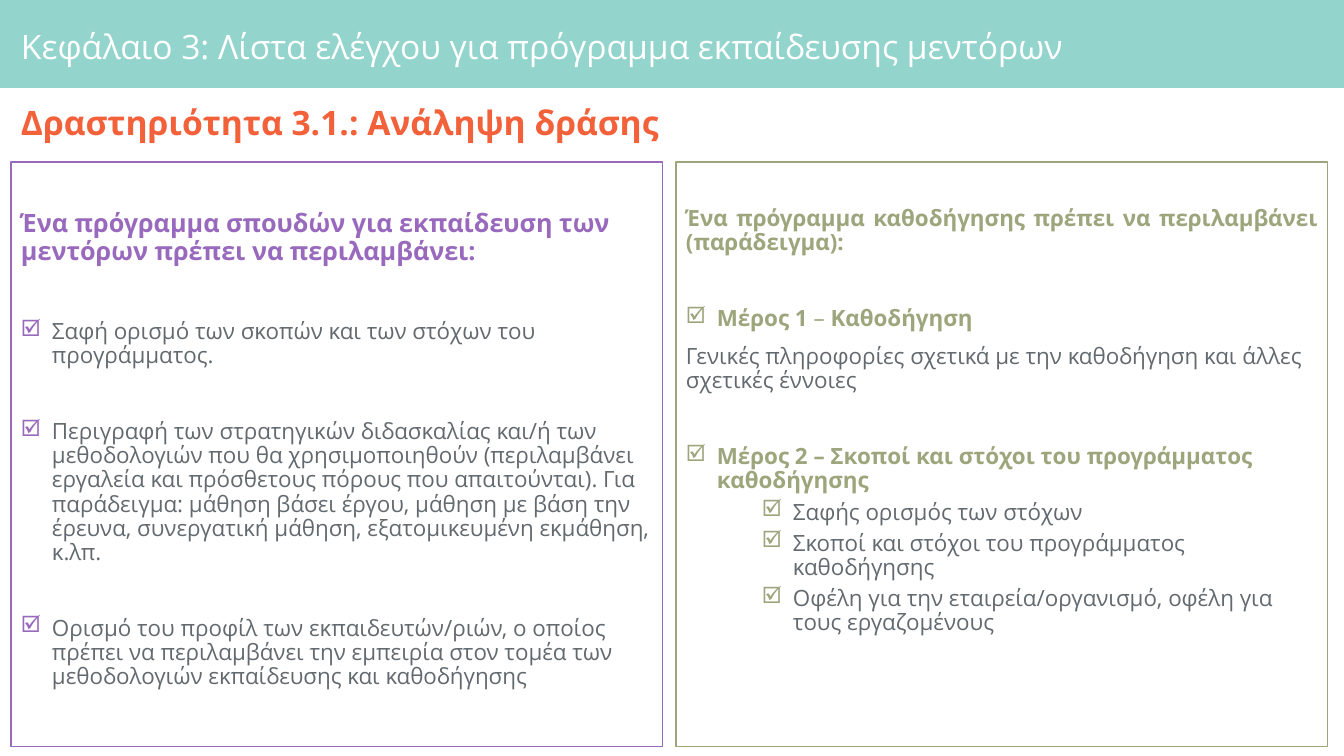
import pptx
import pptx.dml.color
import pptx.enum.shapes
import pptx.enum.text
import pptx.oxml.ns
import pptx.util
from lxml import etree

EMU_PER_PX = 914400 / 100.8
FONT = "Open Sans"
BULLET_FONT, CHECK_MARK = "Wingdings", "þ"
MINT, ORANGE, WHITE = "93D4CC", "F2613A", "FFFFFF"
PURPLE, OLIVE, GREY = "9869BD", "9DA57C", "636A6F"
LEFT = pptx.enum.text.PP_ALIGN.LEFT
JUSTIFY = pptx.enum.text.PP_ALIGN.JUSTIFY
MARGIN, GAP = 11, 13
PANEL_WIDTH, PANEL_TOP, PANEL_HEIGHT = 652, 162, 585


def px(length):
    return pptx.util.Emu(round(length * EMU_PER_PX))


def colour(value):
    return pptx.dml.color.RGBColor.from_string(value)


def add_rectangle(page, left, top, width, height, fill=None, line=None):
    box = page.shapes.add_shape(
        pptx.enum.shapes.MSO_SHAPE.RECTANGLE, px(left), px(top), px(width), px(height))
    box.shadow.inherit = False
    if fill:
        box.fill.solid()
        box.fill.fore_color.rgb = colour(fill)
    else:
        box.fill.background()
    if line:
        box.line.color.rgb = colour(line)
        box.line.width = pptx.util.Pt(0.75)
    else:
        box.line.fill.background()
    return box


def prepare_frame(box, anchor, top_inset):
    frame = box.text_frame
    frame.word_wrap = True
    frame.vertical_anchor = anchor
    frame.margin_left = frame.margin_right = px(10)
    frame.margin_top, frame.margin_bottom = px(top_inset), px(5)
    return frame


def style_paragraph(para, size, tone, bold=False, before=0, align=LEFT):
    para.font.name = FONT
    para.font.size = pptx.util.Pt(size)
    para.font.color.rgb = colour(tone)
    para.font.bold = bold
    para.alignment = align
    para.line_spacing = 0.9
    para.space_before = pptx.util.Pt(before)


def add_check(para, tone, indent):
    properties = para._p.get_or_add_pPr()
    properties.set("marL", str(px(indent)))
    properties.set("indent", str(px(-31)))
    qn = pptx.oxml.ns.qn
    bullet_colour = etree.SubElement(properties, qn("a:buClr"))
    etree.SubElement(bullet_colour, qn("a:srgbClr")).set("val", tone)
    bullet_font = etree.SubElement(properties, qn("a:buFont"))
    bullet_font.set("typeface", BULLET_FONT)
    bullet_font.set("charset", "2")
    etree.SubElement(properties, qn("a:buChar")).set("char", CHECK_MARK)
    defaults = properties.find(qn("a:defRPr"))
    if defaults is not None:
        properties.append(defaults)


def add_heading(page, text, top, height, tone, bold):
    box = page.shapes.add_textbox(px(MARGIN), px(top), px(1317), px(height))
    frame = prepare_frame(box, pptx.enum.text.MSO_ANCHOR.MIDDLE, 5)
    frame.text = text
    style_paragraph(frame.paragraphs[0], 24, tone, bold)


def add_panel(page, column, tone, top_inset, heading, heading_size, heading_align):
    left = MARGIN + column * (PANEL_WIDTH + GAP)
    box = add_rectangle(page, left, PANEL_TOP, PANEL_WIDTH, PANEL_HEIGHT, line=tone)
    frame = prepare_frame(box, pptx.enum.text.MSO_ANCHOR.TOP, top_inset)
    frame.text = heading
    style_paragraph(frame.paragraphs[0], heading_size, tone, True, align=heading_align)
    return frame


def add_item(frame, text, tone, before, bold=False, check=None, indent=31):
    para = frame.add_paragraph()
    para.text = text
    style_paragraph(para, 16, tone, bold, before)
    if check:
        add_check(para, check, indent)
    return para


def add_curriculum(page):
    frame = add_panel(
        page, 0, PURPLE, 49,
        "Ένα πρόγραμμα σπουδών για εκπαίδευση των μεντόρων πρέπει να περιλαμβάνει:",
        18, LEFT)
    items = (
        ("Σαφή ορισμό των σκοπών και των στόχων του προγράμματος.", 39),
        ("Περιγραφή των στρατηγικών διδασκαλίας και/ή των μεθοδολογιών που θα "
         "χρησιμοποιηθούν (περιλαμβάνει εργαλεία και πρόσθετους πόρους που "
         "απαιτούνται). Για παράδειγμα: μάθηση βάσει έργου, μάθηση με βάση την έρευνα, "
         "συνεργατική μάθηση, εξατομικευμένη εκμάθηση, κ.λπ.", 37),
        ("Ορισμό του προφίλ των εκπαιδευτών/ριών, ο οποίος πρέπει να περιλαμβάνει την "
         "εμπειρία στον τομέα των μεθοδολογιών εκπαίδευσης και καθοδήγησης", 37),
    )
    for text, before in items:
        add_item(frame, text, GREY, before, check=PURPLE)


def add_programme(page):
    frame = add_panel(
        page, 1, OLIVE, 45,
        "Ένα πρόγραμμα καθοδήγησης πρέπει να περιλαμβάνει (παράδειγμα):", 16, JUSTIFY)
    part = add_item(frame, "Μέρος 1 ", OLIVE, 37, True, OLIVE)
    for text, bold in (("– ", False), ("Καθοδήγηση", True)):
        span = part.add_run()
        span.text = text
        span.font.bold = bold
    add_item(frame, "Γενικές πληροφορίες σχετικά με την καθοδήγηση και άλλες σχετικές έννοιες",
             GREY, 10)
    add_item(frame, "Μέρος 2 – Σκοποί και στόχοι του προγράμματος καθοδήγησης",
             OLIVE, 37, True, OLIVE)
    for text in (
        "Σαφής ορισμός των στόχων",
        "Σκοποί και στόχοι του προγράμματος καθοδήγησης",
        "Οφέλη για την εταιρεία/οργανισμό, οφέλη για τους εργαζομένους",
    ):
        para = add_item(frame, text, GREY, 5, check=OLIVE, indent=107)
        para.level = 1


def main():
    deck = pptx.Presentation()
    deck.slide_width, deck.slide_height = px(1344), px(756)
    page = deck.slides.add_slide(deck.slide_layouts[6])
    add_rectangle(page, 0, 0, 1344, 88, fill=MINT)
    add_heading(page, "Κεφάλαιο 3: Λίστα ελέγχου για πρόγραμμα εκπαίδευσης μεντόρων",
                9, 79, WHITE, False)
    add_heading(page, "Δραστηριότητα 3.1.: Ανάληψη δράσης", 95, 60, ORANGE, True)
    add_curriculum(page)
    add_programme(page)
    deck.save("out.pptx")


if __name__ == "__main__":
    main()
